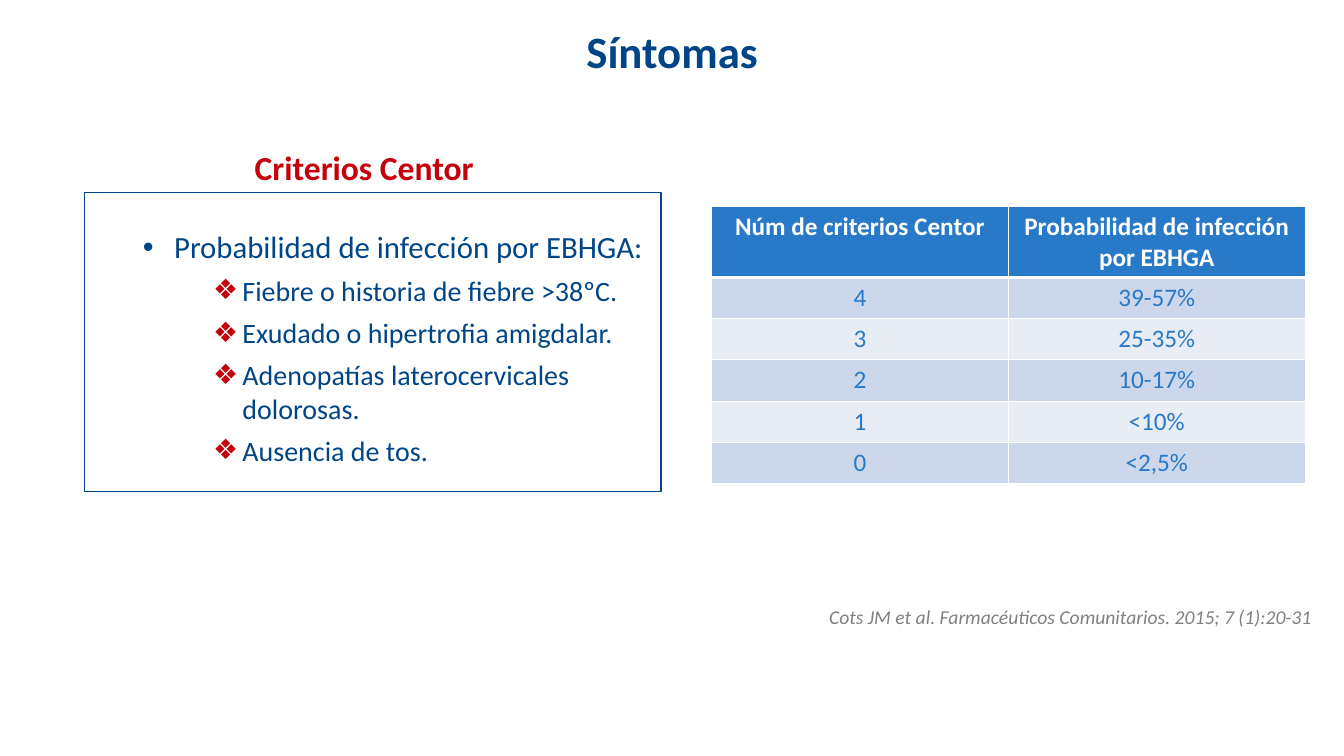
from lxml.etree import SubElement as Sub
from pptx import Presentation
from pptx.dml.color import RGBColor
from pptx.enum.shapes import MSO_SHAPE as Shape
from pptx.enum.text import MSO_ANCHOR as Anchor, PP_ALIGN as Align
from pptx.oxml.ns import qn
from pptx.util import Cm, Pt

NAVY = RGBColor(0x00, 0x45, 0x86)
RED = RGBColor(0xC5, 0x00, 0x0B)
GRAY = RGBColor(0x80, 0x80, 0x80)
BLUE = RGBColor(0x28, 0x7A, 0xC8)
WHITE = RGBColor(0xFF, 0xFF, 0xFF)
DARK = RGBColor(0xCD, 0xD7, 0xEB)
LIGHT = RGBColor(0xE8, 0xEC, 0xF5)


def style(para, size, color, align, bold=False, italic=False):
    para.alignment = align
    for run in para.runs:
        font = run.font
        font.name, font.size = "Calibri", Pt(size)
        font.bold, font.italic = bold, italic
        font.color.rgb = color


def border(cell, side, width):
    line = Sub(cell._tc.get_or_add_tcPr(), qn("a:" + side), w=str(Pt(width)))
    fill = Sub(line, qn("a:solidFill"))
    Sub(fill, qn("a:srgbClr"), val=str(WHITE))


deck = Presentation()
deck.slide_width, deck.slide_height = Cm(33.87), Cm(19.05)
slide = deck.slides.add_slide(deck.slide_layouts[5])
shapes = slide.shapes

# Title
title = shapes.title
title.left, title.top, title.width, title.height = Cm(1.7), Cm(0.43), Cm(30.48), Cm(1.68)
title.text_frame.text = "Síntomas"
title.text_frame.vertical_anchor = Anchor.MIDDLE
style(title.text_frame.paragraphs[0], 32, NAVY, Align.CENTER, bold=True)

# Heading and citation
head = shapes.add_textbox(Cm(1.7), Cm(2.13), Cm(14.96), Cm(2.72)).text_frame
head.word_wrap = True
head.vertical_anchor = Anchor.BOTTOM
head.text = "Criterios Centor"
style(head.paragraphs[0], 24, RED, Align.CENTER, bold=True)

cite = shapes.add_textbox(Cm(1.14), Cm(15.11), Cm(32.18), Cm(0.81)).text_frame
cite.word_wrap = True
cite.text = "Cots JM et al. Farmacéuticos Comunitarios. 2015; 7 (1):20-31"
style(cite.paragraphs[0], 14, GRAY, Align.RIGHT, italic=True)

# Framed list of criteria
box = shapes.add_shape(Shape.RECTANGLE, Cm(2.13), Cm(4.85), Cm(14.53), Cm(7.54))
box.shadow.inherit = False
box.fill.background()
box.line.color.rgb = NAVY
box.line.width = Pt(1)
frame = box.text_frame
frame.word_wrap = True
frame.vertical_anchor = Anchor.MIDDLE
frame.margin_top = Cm(0.4)
items = [
    "Probabilidad de infección por EBHGA:",
    "Fiebre o historia de fiebre >38ºC.",
    "Exudado o hipertrofia amigdalar.",
    "Adenopatías laterocervicales dolorosas.",
    "Ausencia de tos.",
]
for i, text in enumerate(items):
    para = frame.paragraphs[0] if i == 0 else frame.add_paragraph()
    para.text = text
    mark, tint, size, left, hang = ("❖", RED, 20, 3.73, 0.74) if i else ("•", NAVY, 22, 2.01, 0.79)
    if i:
        para.level = 1
        para.space_before = Pt(6)
    props = para._p.get_or_add_pPr()
    props.set("marL", str(Cm(left)))
    props.set("indent", str(-Cm(hang)))
    Sub(Sub(props, qn("a:buClr")), qn("a:srgbClr"), val=str(tint))
    Sub(props, qn("a:buFont"), typeface="Arial")
    Sub(props, qn("a:buChar"), char=mark)
    style(para, size, NAVY, Align.LEFT)

# Table of probabilities
rows = [
    ("Núm de criterios Centor", "Probabilidad de infección por EBHGA"),
    ("4", "39-57%"),
    ("3", "25-35%"),
    ("2", "10-17%"),
    ("1", "<10%"),
    ("0", "<2,5%"),
]
table = shapes.add_table(len(rows), 2, Cm(17.93), Cm(5.21), Cm(14.96), Cm(6.95)).table
for r, row in enumerate(rows):
    table.rows[r].height = Cm(1.04 if r else 1.77)
    for c, text in enumerate(row):
        cell = table.cell(r, c)
        cell.text = text
        style(cell.text_frame.paragraphs[0], 18, BLUE if r else WHITE, Align.CENTER, bold=r == 0)
        for side in ("lnL", "lnR", "lnT", "lnB"):
            thick = (r, side) in ((0, "lnB"), (1, "lnT"))
            border(cell, side, 3 if thick else 1)
        cell.fill.solid()
        cell.fill.fore_color.rgb = (DARK if r % 2 else LIGHT) if r else BLUE

deck.save("out.pptx")
